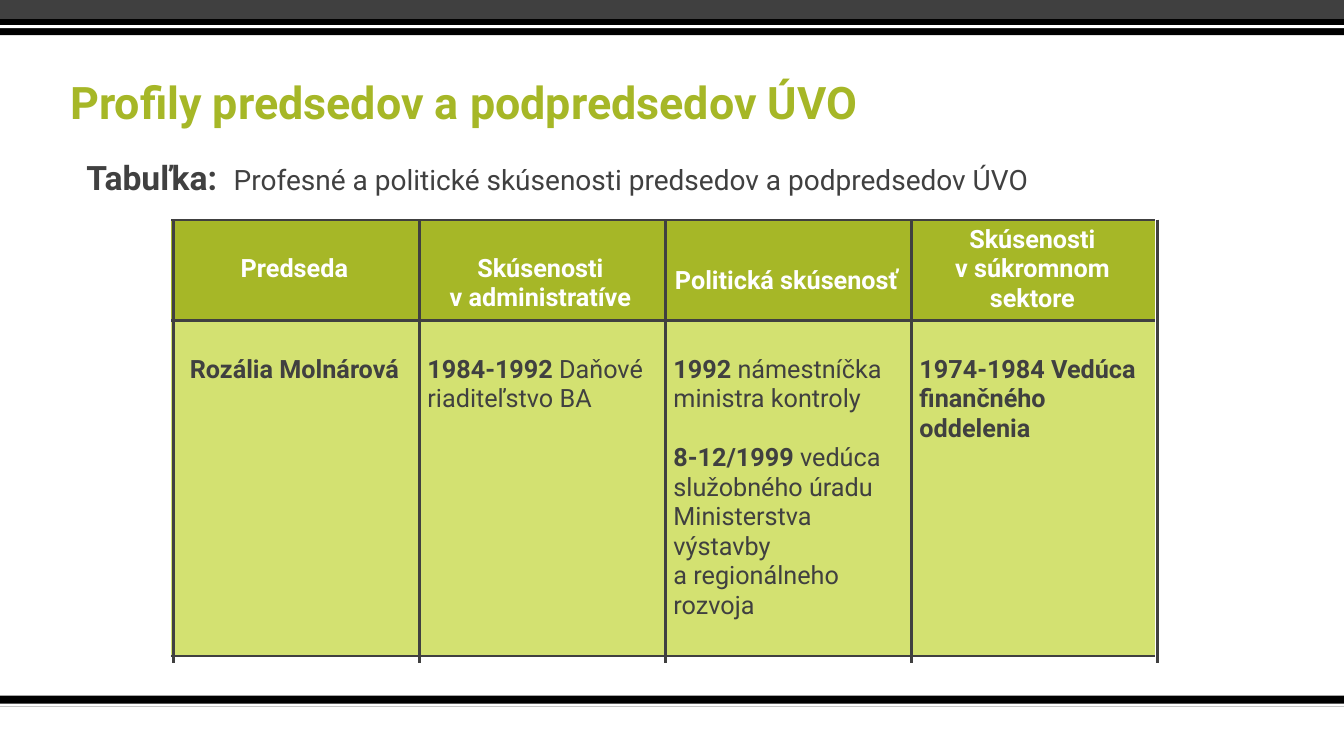
from lxml import etree
from pptx import Presentation
from pptx.dml.color import RGBColor
from pptx.enum.shapes import MSO_CONNECTOR, MSO_SHAPE
from pptx.enum.text import MSO_ANCHOR, PP_ALIGN
from pptx.oxml.ns import qn
from pptx.util import Inches, Pt

RECT = MSO_SHAPE.RECTANGLE
STRAIGHT = MSO_CONNECTOR.STRAIGHT
TOP = MSO_ANCHOR.TOP
LEFT, CENTER = PP_ALIGN.LEFT, PP_ALIGN.CENTER

FONT = "Roboto"
COLORS = {"black": "000000", "white": "FFFFFF", "dark": "404040",
          "green": "A6B727", "light": "D3E171"}

# Slide and table grid, in inches
SLIDE_W, SLIDE_H = 13.33, 7.5
TABLE_X, TABLE_Y, COL_W = 1.7, 2.18, 2.44
ROW_H = (0.98, 3.33)
RULE_X, RULE_BOTTOM = 1.72, 6.58
LINE = 0.29   # one line of 18 pt text
PAD = 0.05

# (top, height, colour) of the full-width bands
BANDS = [(6.9, 0.11, "black"), (6.98, 0.03, "white"),
         (0, 0.19, "dark"), (0.19, 0.16, "black"), (0.25, 0.03, "white")]

# (text, top margin, side margin) of each header cell
HEADERS = [("Predseda", PAD + LINE, 0.1),
           ("Skúsenosti v\u00a0administratíve", PAD + LINE, 0.1),
           ("Politická skúsenosť", 0.46, 0.07),
           ("Skúsenosti v\u00a0súkromnom sektore", PAD, 0.1)]

# Each cell is a list of paragraphs: (bold part, plain part)
PROFILE = [
    [("Rozália Molnárová", "")],
    [("1984-1992", " Daňové riaditeľstvo BA")],
    [("1992", " námestníčka ministra kontroly"),
     ("8-12/1999", " vedúca služobného úradu Ministerstva výstavby "
                   "a\u00a0regionálneho rozvoja")],
    [("1974-1984 Vedúca finančného oddelenia", "")],
]


def rgb(name):
    return RGBColor.from_string(COLORS[name])


def add_run(p, text, size, color, bold):
    r = p.add_run()
    r.text = text
    r.font.name, r.font.size, r.font.bold = FONT, Pt(size), bold
    r.font.color.rgb = rgb(color)


def add_band(slide, top, height, color):
    sp = slide.shapes.add_shape(RECT, 0, Inches(top), Inches(SLIDE_W), Inches(height))
    sp.shadow.inherit = False
    sp.fill.solid()
    sp.fill.fore_color.rgb = rgb(color)
    sp.line.fill.background()


def add_text(slide, left, top, height, runs, tab=None):
    box = slide.shapes.add_textbox(Inches(left), Inches(top), Inches(11), Inches(height))
    tf = box.text_frame
    tf.word_wrap = True
    p = tf.paragraphs[0]
    p.line_spacing = 0.9
    if tab:
        tabs = etree.SubElement(p._p.get_or_add_pPr(), qn("a:tabLst"))
        etree.SubElement(tabs, qn("a:tab"), pos=str(Inches(tab)), algn="l")
    for run in runs:
        add_run(p, *run)


def set_borders(cell):
    tcPr = cell._tc.get_or_add_tcPr()
    for side in ("lnL", "lnR"):
        etree.SubElement(etree.SubElement(tcPr, qn("a:" + side)), qn("a:noFill"))
    for side in ("lnT", "lnB"):
        ln = etree.SubElement(tcPr, qn("a:" + side), w=str(Pt(2)))
        fill = etree.SubElement(ln, qn("a:solidFill"))
        etree.SubElement(fill, qn("a:srgbClr"), val=COLORS["dark"])


def fill_cell(cell, paragraphs, fill, color, align, top, side=0.1):
    set_borders(cell)
    cell.fill.solid()
    cell.fill.fore_color.rgb = rgb(fill)
    cell.vertical_anchor = TOP
    cell.margin_top, cell.margin_bottom = Inches(top), Inches(PAD)
    cell.margin_left = cell.margin_right = Inches(side)
    tf = cell.text_frame
    for i, (bold, plain) in enumerate(paragraphs):
        p = tf.add_paragraph() if i else tf.paragraphs[0]
        p.alignment = align
        if i:
            p.space_before = Pt(21)
        add_run(p, bold, 18, color, True)
        if plain:
            add_run(p, plain, 18, color, False)


def add_profile_table(slide):
    n = len(HEADERS)
    frame = slide.shapes.add_table(2, n, Inches(TABLE_X), Inches(TABLE_Y),
                                   Inches(COL_W * n), Inches(sum(ROW_H)))
    table = frame.table
    for row, height in zip(table.rows, ROW_H):
        row.height = Inches(height)
    for col, (text, top, side) in enumerate(HEADERS):
        fill_cell(table.cell(0, col), [(text, "")], "green", "white", CENTER, top, side)
    for col, paragraphs in enumerate(PROFILE):
        align = LEFT if col else CENTER
        fill_cell(table.cell(1, col), paragraphs, "light", "dark", align, PAD + LINE)


def add_rule(slide, x):
    line = slide.shapes.add_connector(STRAIGHT, Inches(x), Inches(TABLE_Y),
                                      Inches(x), Inches(RULE_BOTTOM))
    line.line.color.rgb = rgb("dark")
    line.line.width = Pt(2.25)
    etree.SubElement(line._element.spPr, qn("a:effectLst"))


def main():
    prs = Presentation()
    prs.slide_width, prs.slide_height = Inches(SLIDE_W), Inches(SLIDE_H)
    slide = prs.slides.add_slide(prs.slide_layouts[6])

    # Bands at the top and bottom
    for band in BANDS:
        add_band(slide, *band)

    # Title and table caption
    add_text(slide, 0.6, 0.75, 0.6,
             [("Profily predsedov a\u00a0podpredsedov ÚVO", 32, "green", True)])
    add_text(slide, 0.76, 1.55, 0.5,
             [("Tabuľka:\t", 24, "dark", True),
              ("Profesné a\u00a0politické skúsenosti predsedov a\u00a0podpredsedov ÚVO",
               20, "dark", False)], tab=1.46)

    # Table with its vertical rules
    add_profile_table(slide)
    for i in range(len(HEADERS) + 1):
        add_rule(slide, RULE_X + i * COL_W)

    prs.save("out.pptx")


if __name__ == "__main__":
    main()
